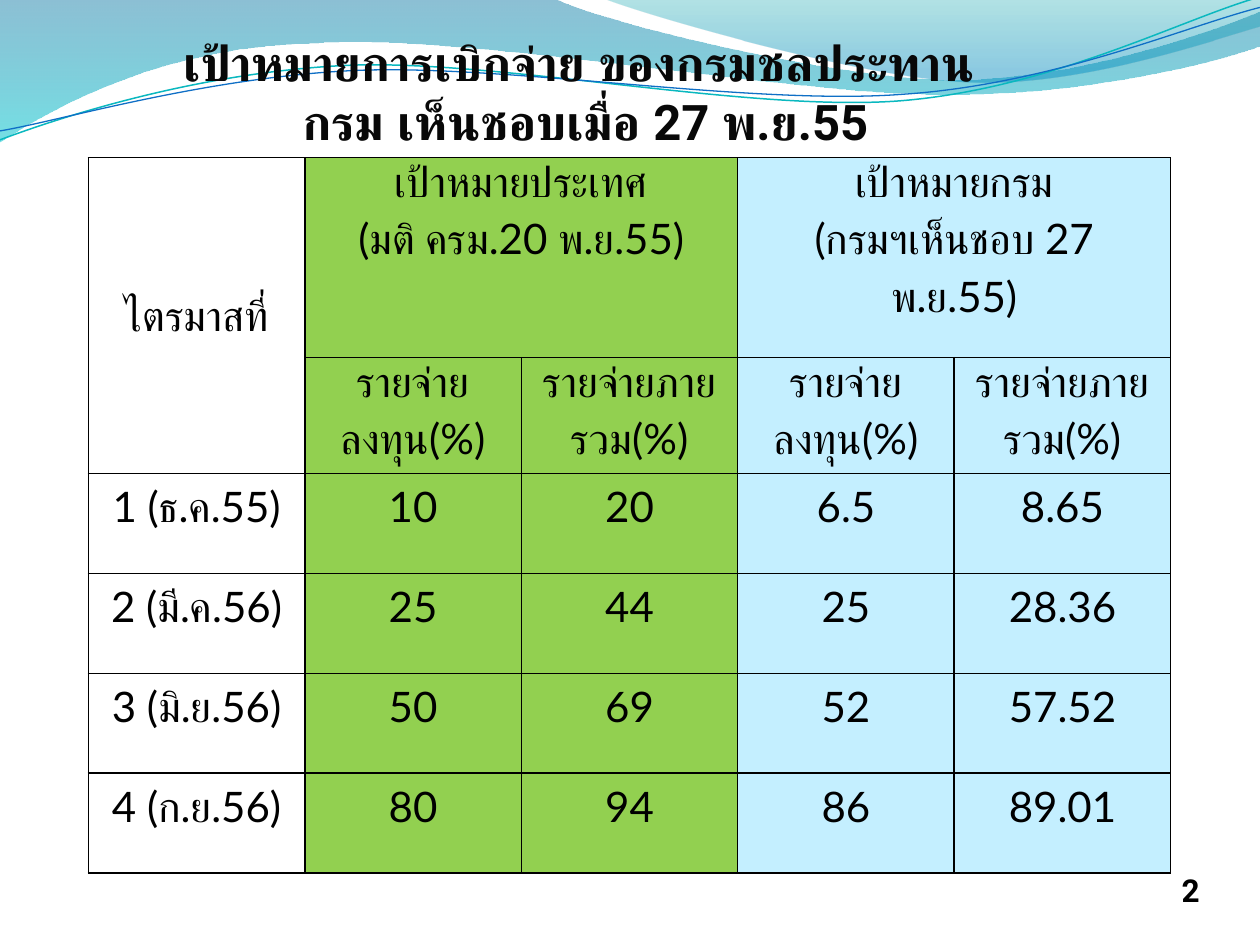
from dataclasses import dataclass
from itertools import chain

from lxml import etree
from pptx import Presentation
from pptx.dml.color import RGBColor
from pptx.enum import text
from pptx.oxml.ns import qn
from pptx.util import Cm, Pt

Point = tuple[float, float]


@dataclass(frozen=True)
class Theme:
    title_font: str = "Roboto"
    table_font: str = "Lato"
    title_size: int = 28
    table_size: int = 24
    number_size: int = 18
    title_ink: str = "080808"
    ink: str = "000000"
    country: str = "92D050"
    department: str = "C4EFFF"
    teal_line: str = "0AB8BF"
    blue_line: str = "0F6FC6"


@dataclass(frozen=True)
class Stop:
    position: float
    color: str
    opacity: int


@dataclass(frozen=True)
class Wave:
    """Points in cm; a segment of one point is straight, of three a cubic curve."""
    start: Point
    segments: tuple[tuple[Point, ...], ...]
    stops: tuple[Stop, ...] = ()
    line_color: str = ""
    line_width: float = 0
    rotation: float = 0


@dataclass(frozen=True)
class Label:
    left: float
    top: float
    width: float
    height: float
    lines: tuple[str, ...]
    size: int
    color: str


@dataclass(frozen=True)
class Span:
    row: int
    column: int
    last_row: int
    last_column: int


THEME = Theme()
LINE_TILT = 357.3

WAVES = (
    Wave((0, 0), (
        ((11.18, -0.03),),
        ((12.09, 0.43), (16.87, 1.6), (19.25, 1.6)),
        ((21.67, 1.6), (24.33, 0.66), (25.4, 0.23)),
        ((25.43, 0.91),),
        ((24.97, 1.12), (22.1, 1.93), (18.95, 1.9)),
        ((15.8, 1.9), (9.7, 0.71), (6.53, 0.86)),
        ((3.28, 0.91), (1.17, 2.11), (-0.03, 2.87)),
        ((0, 0),),
    ), stops=(Stop(0, "0074A1", 45), Stop(1, "00C6CF", 55))),
    Wave((12.17, -0.03), (
        ((12.93, 0.28), (17.32, 1.57), (19.53, 1.65)),
        ((21.74, 1.75), (24.41, 0.81), (25.4, 0.53)),
        ((25.4, 0),),
        ((12.17, -0.03),),
    ), stops=(Stop(0, "00A1A9", 30), Stop(0.8, "008BBF", 45))),
    Wave((-0.05, 2.22), (
        ((1.19, 1.82), (4.02, 1.04), (7.05, 1.05)),
        ((10.05, 1.07), (15.02, 2.37), (18.08, 2.29)),
        ((21.13, 2.2), (23.87, 0.91), (25.41, 0.55)),
    ), line_color=THEME.teal_line, line_width=0.85, rotation=LINE_TILT),
    Wave((-0.04, 2.04), (
        ((1.16, 1.9), (4.18, 1.15), (7.2, 1.16)),
        ((10.25, 1.18), (15.13, 2.25), (18.18, 2.16)),
        ((21.21, 2.1), (23.93, 1.06), (25.45, 0.75)),
    ), line_color=THEME.blue_line, line_width=0.75, rotation=LINE_TILT),
)

LABELS = (
    Label(23.22, 17.43, 1.57, 1.02, ("2",), THEME.number_size, THEME.ink),
    Label(1.3, 0.53, 21, 3.84,
          ("เป้าหมายการเบิกจ่าย ของกรมชลประทาน ", "กรม เห็นชอบเมื่อ 27 พ.ย.55"),
          THEME.title_size, THEME.title_ink),
)

INVESTMENT, OVERALL = "รายจ่ายลงทุน(%)", "รายจ่ายภายรวม(%)"
TARGETS = (
    ("ไตรมาสที่", "เป้าหมายประเทศ\n(มติ ครม.20 พ.ย.55)", "",
     "เป้าหมายกรม\n(กรมฯเห็นชอบ 27 พ.ย.55)", ""),
    ("", INVESTMENT, OVERALL, INVESTMENT, OVERALL),
    ("1 (ธ.ค.55)", "10", "20", "6.5", "8.65"),
    ("2 (มี.ค.56)", "25", "44", "25", "28.36"),
    ("3 (มิ.ย.56)", "50", "69", "52", "57.52"),
    ("4 (ก.ย.56)", "80", "94", "86", "89.01"),
)
COLUMN_FILLS = ("", THEME.country, THEME.country, THEME.department, THEME.department)
SPANS = (Span(0, 0, 1, 0), Span(0, 1, 0, 2), Span(0, 3, 0, 4))
TABLE_WIDTH, TABLE_HEIGHT = 21.82, 14.1


def rgb(color: str) -> RGBColor:
    return RGBColor.from_string(color)


def bend(band, segments: tuple[tuple[Point, ...], ...]) -> None:
    """Join the straight steps of every three-point segment into one cubic curve."""
    steps = iter(list(band.element.iter(qn("a:lnTo"))))
    for segment in segments:
        first, *others = [next(steps) for _ in segment]
        if others:
            first.tag = qn("a:cubicBezTo")
        for step in others:
            first.append(step[0])
            step.getparent().remove(step)


def draw_wave(slide, wave: Wave) -> None:
    builder = slide.shapes.build_freeform(*map(Cm, wave.start))
    builder.add_line_segments([(Cm(x), Cm(y)) for x, y in chain(*wave.segments)],
                              close=bool(wave.stops))
    band = builder.convert_to_shape()
    bend(band, wave.segments)
    band.rotation = wave.rotation
    band.shadow.inherit = False
    if not wave.stops:
        band.fill.background()
        band.line.color.rgb = rgb(wave.line_color)
        band.line.width = Pt(wave.line_width)
        return
    band.line.fill.background()
    band.fill.gradient()
    band.fill.gradient_angle = 270
    for target, stop in zip(band.fill.gradient_stops, wave.stops):
        target.color.rgb = rgb(stop.color)
        target.position = stop.position
    for color, stop in zip(band.element.iter(qn("a:srgbClr")), wave.stops):
        etree.SubElement(color, qn("a:alpha"), val=str(stop.opacity * 1000))


def style(paragraph, font: str, size: int, color: str, bold: bool) -> None:
    paragraph.alignment = text.PP_ALIGN.CENTER
    paragraph.font.name = font
    paragraph.font.size = Pt(size)
    paragraph.font.bold = bold
    paragraph.font.color.rgb = rgb(color)


def draw_label(slide, label: Label) -> None:
    frame = slide.shapes.add_textbox(Cm(label.left), Cm(label.top),
                                     Cm(label.width), Cm(label.height)).text_frame
    frame.word_wrap = True
    frame.auto_size = text.MSO_AUTO_SIZE.SHAPE_TO_FIT_TEXT
    frame.text = "\n".join(label.lines)
    for paragraph in frame.paragraphs:
        style(paragraph, THEME.title_font, label.size, label.color, True)


def add_borders(cell) -> None:
    properties = cell._tc.get_or_add_tcPr()
    for side in ("lnL", "lnR", "lnT", "lnB"):
        edge = etree.SubElement(properties, qn(f"a:{side}"), w=str(Pt(1)))
        fill = etree.SubElement(edge, qn("a:solidFill"))
        etree.SubElement(fill, qn("a:srgbClr"), val=THEME.ink)


def fill_cell(cell, content: str, color: str) -> None:
    add_borders(cell)
    if color:
        cell.fill.solid()
        cell.fill.fore_color.rgb = rgb(color)
    else:
        cell.fill.background()
    cell.margin_left = cell.margin_right = Cm(0.19)
    cell.margin_top = cell.margin_bottom = 0
    cell.text = content
    for paragraph in cell.text_frame.paragraphs:
        style(paragraph, THEME.table_font, THEME.table_size, THEME.ink, False)
        paragraph.line_spacing = 1.15


def draw_targets(slide) -> None:
    rows, columns = len(TARGETS), len(COLUMN_FILLS)
    table = slide.shapes.add_table(rows, columns, Cm(1.78), Cm(3.18),
                                   Cm(TABLE_WIDTH), Cm(TABLE_HEIGHT)).table
    table.first_row = table.horz_banding = False
    row_height = TABLE_HEIGHT / (rows + 1)
    for index, row in enumerate(table.rows):
        row.height = Cm(row_height * (2 if index == 0 else 1))
        for cell, content, color in zip(row.cells, TARGETS[index], COLUMN_FILLS):
            fill_cell(cell, content, color)
    for span in SPANS:
        table.cell(span.row, span.column).merge(table.cell(span.last_row, span.last_column))
    table.cell(0, 0).vertical_anchor = text.MSO_ANCHOR.MIDDLE


def main() -> None:
    deck = Presentation()
    deck.slide_width, deck.slide_height = Cm(25.4), Cm(19.05)
    slide = deck.slides.add_slide(deck.slide_layouts[6])
    for wave in WAVES:
        draw_wave(slide, wave)
    for label in LABELS:
        draw_label(slide, label)
    draw_targets(slide)
    deck.save("out.pptx")


if __name__ == "__main__":
    main()
